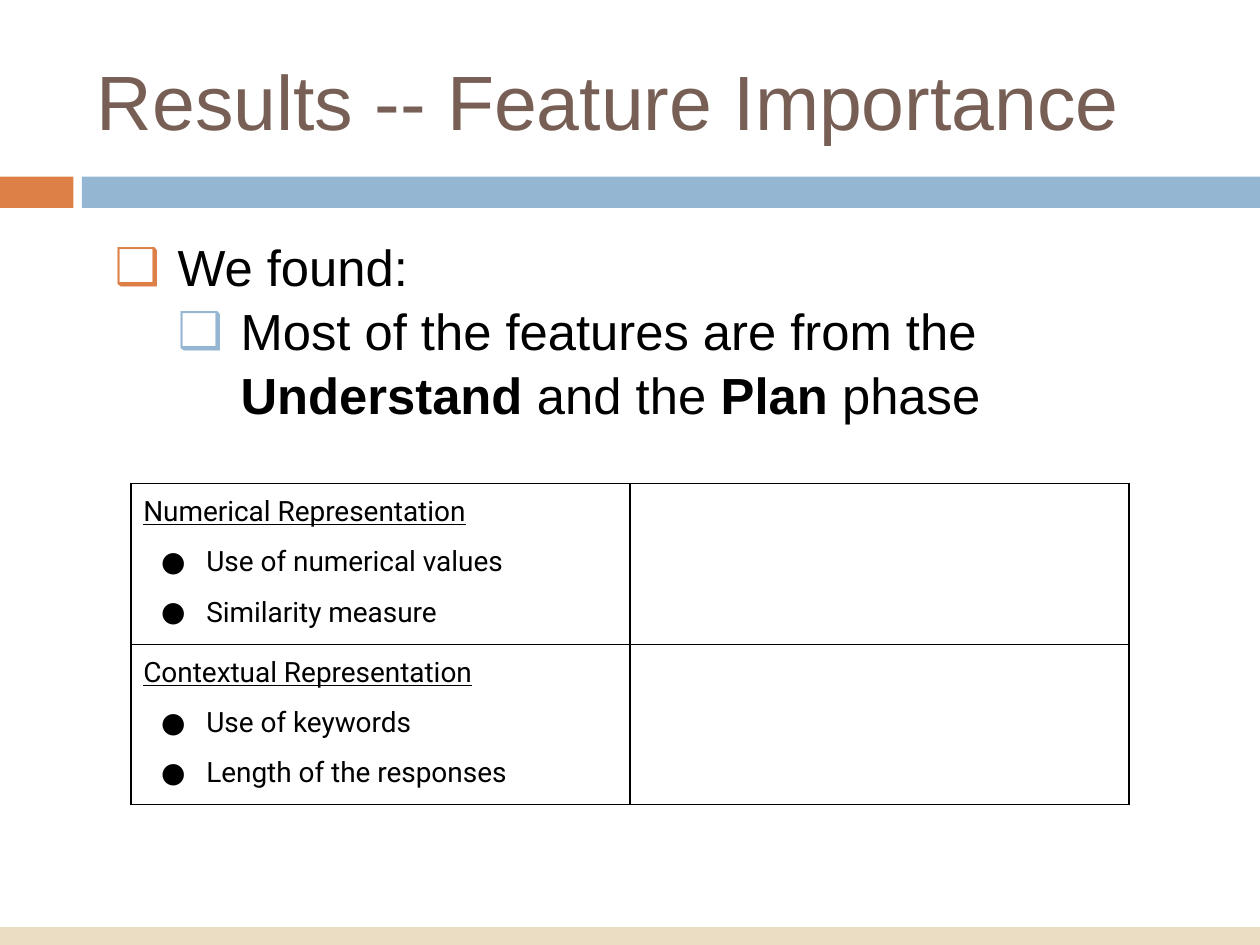
from pptx import Presentation
from pptx.dml.color import RGBColor as RGB
from pptx.enum.shapes import MSO_SHAPE as SHAPE
from pptx.enum.text import MSO_ANCHOR as ANCHOR
from pptx.oxml import parse_xml
from pptx.oxml.ns import nsdecls
from pptx.util import Cm, Pt

NS = nsdecls("a")


def tint(code):
    return RGB.from_string(code)


def write(para, text, size=16, font="Roboto", color="000000", line=False,
          bullet=None, mark="000000", left=0, hang=0, before=0, space=None):
    """Fill a paragraph; words between asterisks are bold."""
    para.space_before = Pt(before)
    para.line_spacing = space
    for i, part in enumerate(text.split("*")):
        run = para.add_run()
        run.text = part
        run.font.size, run.font.name = Pt(size), font
        run.font.color.rgb = tint(color)
        run.font.bold = i % 2 == 1
        run.font.underline = line
    if bullet:
        props = para._p.get_or_add_pPr()
        props.set("marL", str(Cm(left)))
        props.set("indent", str(-Cm(hang)))
        props.append(parse_xml(f'<a:buClr {NS}><a:srgbClr val="{mark}"/></a:buClr>'))
        props.append(parse_xml(f'<a:buFont {NS} typeface="{font}"/>'))
        props.append(parse_xml(f'<a:buChar {NS} char="{bullet}"/>'))


deck = Presentation()
deck.slide_width, deck.slide_height = Cm(25.4), Cm(19.05)
slide = deck.slides.add_slide(deck.slide_layouts[6])
shapes = slide.shapes

# Colour bars
for x, y, w, h, color in [(0, 3.56, 1.48, 0.63, "DD8047"),
                          (1.65, 3.56, 23.75, 0.63, "94B6D2"),
                          (0, 18.69, 25.4, 0.36, "EBDDC3")]:
    bar = shapes.add_shape(SHAPE.RECTANGLE, Cm(x), Cm(y), Cm(w), Cm(h))
    bar.shadow.inherit = False
    bar.fill.solid()
    bar.fill.fore_color.rgb = tint(color)
    bar.line.fill.background()

# Title and body frames
frames = []
for y, w, h, anchor in [(0.43, 22.86, 3.18, ANCHOR.MIDDLE),
                        (4.45, 23.67, 4.67, ANCHOR.TOP)]:
    frame = shapes.add_textbox(Cm(1.7), Cm(y), Cm(w), Cm(h)).text_frame
    frame.word_wrap = True
    frame.vertical_anchor = anchor
    frame.margin_left = frame.margin_right = Cm(0.25)
    frame.margin_top = frame.margin_bottom = Cm(0.25)
    frames.append(frame)
title, body = frames

write(title.paragraphs[0], "Results -- Feature Importance",
      size=44, font="Arial", color="775F55")

# Findings
look = dict(size=29, font="Arial", bullet="❑", hang=1.27, space=1.05)
write(body.paragraphs[0], "We found:", mark="DD8047", left=1.63, **look)
para = body.add_paragraph()
para.level = 1
write(para, "Most of the features are from the *Understand* and the *Plan* phase",
      mark="94B6D2", left=2.9, **look)

# Table of representations
groups = [
    ("Numerical Representation", "Use of numerical values", "Similarity measure"),
    ("Contextual Representation", "Use of keywords", "Length of the responses"),
]
table = shapes.add_table(2, 2, Cm(2.64), Cm(9.75), Cm(20.12), Cm(6.36)).table
table.first_row = table.horz_banding = False
for row, (head, *items) in zip(table.rows, groups):
    row.height = Cm(3.18)
    for cell in row.cells:
        cell.margin_left = cell.margin_right = Cm(0.25)
        cell.margin_top = cell.margin_bottom = Cm(0.25)
        cell.fill.background()
        props = cell._tc.get_or_add_tcPr()
        for i, side in enumerate("LRTB"):
            props.insert(i, parse_xml(
                f'<a:ln{side} {NS} w="{Pt(0.75)}"><a:solidFill>'
                f'<a:srgbClr val="000000"/></a:solidFill></a:ln{side}>'))
    frame = row.cells[0].text_frame
    write(frame.paragraphs[0], head, line=True)
    for item in items:
        write(frame.add_paragraph(), item, bullet="●",
              left=1.27, hang=0.91, before=10)

deck.save("out.pptx")
